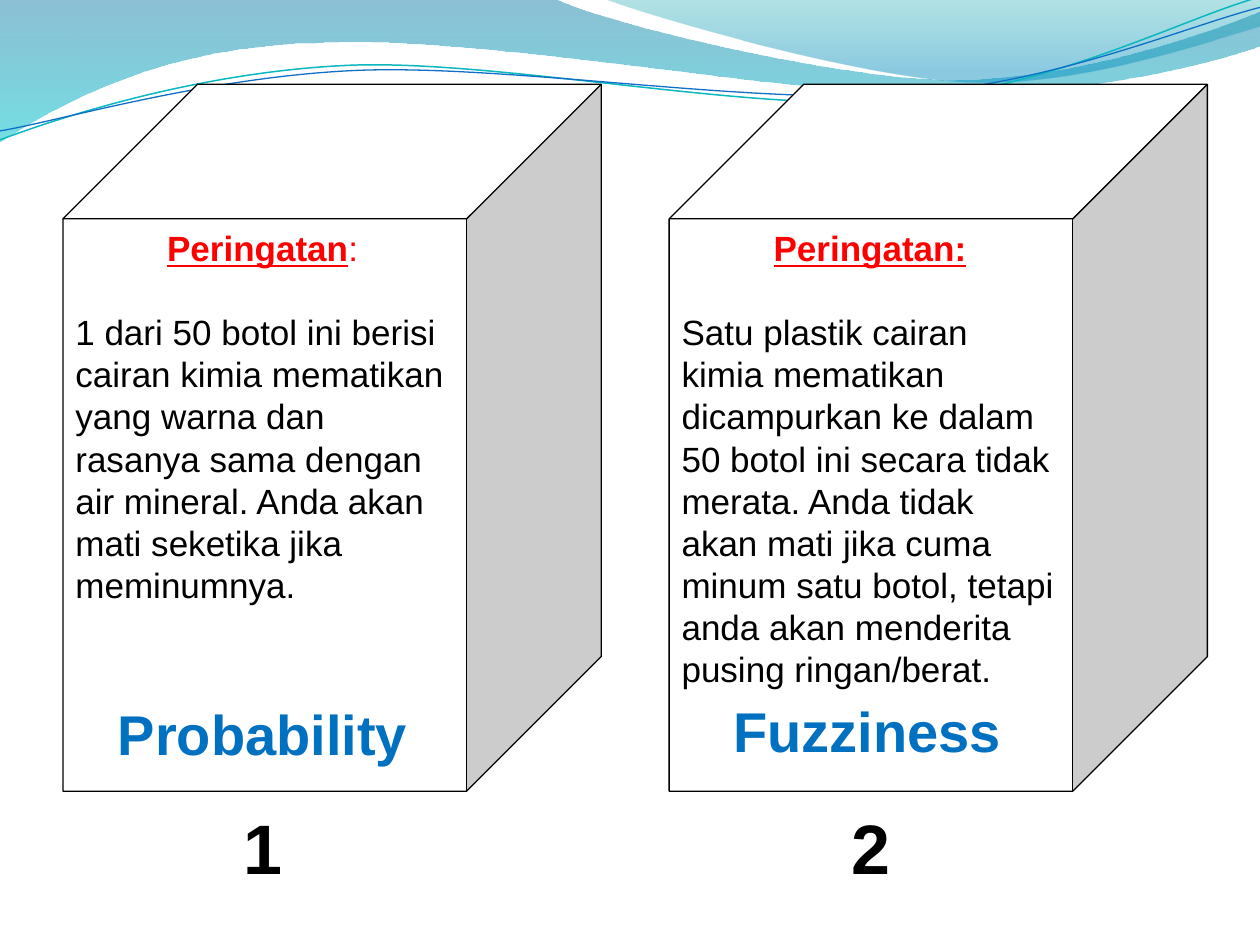
from pptx import Presentation
from pptx.dml.color import RGBColor as RGB
from pptx.enum.shapes import MSO_SHAPE as Shape
from pptx.enum.text import PP_ALIGN as Align
from pptx.oxml.ns import qn
from pptx.util import Cm, Pt
from lxml.etree import SubElement

COLORS = {
    "warning": "FF0000", "text": "000000", "name": "0070C0",
    "cube": "FFFFFF", "edge": "000000",
    "deep": "0074A1", "aqua": "00C6CF", "teal": "00A1A9", "sky": "008BBF",
    "teal line": "0AB8BF", "blue line": "0F6FC6",
}

# Heading runs are (text, underlined and bold); places are left, top, width in cm
BOXES = [
    {"cube left": 1.27,
     "heading": [("Peringatan", True), (":", False)],
     "warning": "1 dari 50 botol ini berisi cairan kimia mematikan yang warna "
                "dan rasanya sama dengan air mineral. Anda akan mati seketika "
                "jika meminumnya.",
     "warning place": (1.27, 4.45, 8.05),
     "labels": [("1", "number", "text", (1.27, 16.1, 8.05)),
                ("Probability", "name", "name", (1.27, 13.98, 8.05))]},
    {"cube left": 13.49,
     "heading": [("Peringatan:", True)],
     "warning": "Satu plastik cairan kimia mematikan dicampurkan ke dalam 50 "
                "botol ini secara tidak merata. Anda tidak akan mati jika cuma "
                "minum satu botol, tetapi anda akan menderita pusing "
                "ringan/berat.",
     "warning place": (13.49, 4.45, 8.1),
     "labels": [("2", "number", "text", (13.54, 16.1, 8.05)),
                ("Fuzziness", "name", "name", (13.46, 13.91, 8.05))]},
]

# Outlines in cm: one point is a straight step, three points are a Bézier curve.
# Gradient stops: position, colour, opacity in percent
BANDS = [
    ([[(0, -0.03)], [(11.18, -0.03)],
      [(12.09, 0.43), (16.87, 1.6), (19.25, 1.6)],
      [(21.67, 1.6), (24.33, 0.66), (25.4, 0.23)], [(25.43, 0.91)],
      [(24.97, 1.12), (22.1, 1.93), (18.95, 1.91)],
      [(15.8, 1.91), (9.7, 0.71), (6.53, 0.86)],
      [(3.28, 0.89), (1.17, 2.11), (-0.03, 2.87)]],
     [(0, "deep", 45), (1, "aqua", 55)]),
    ([[(12.17, -0.03)],
      [(12.93, 0.28), (17.32, 1.57), (19.53, 1.65)],
      [(21.74, 1.75), (24.41, 0.81), (25.4, 0.53)], [(25.4, 0)]],
     [(0, "teal", 30), (0.8, "sky", 45)]),
]
RIPPLES = [
    ([[(-0.05, 2.22)],
      [(1.19, 1.82), (4.02, 1.04), (7.05, 1.05)],
      [(10.05, 1.07), (15.02, 2.37), (18.08, 2.29)],
      [(21.13, 2.2), (23.86, 0.91), (25.41, 0.55)]], "teal line", 0.85),
    ([[(-0.04, 2.04)],
      [(1.16, 1.9), (4.17, 1.15), (7.2, 1.16)],
      [(10.25, 1.18), (15.13, 2.23), (18.19, 2.16)],
      [(21.22, 2.1), (23.93, 1.06), (25.45, 0.75)]], "blue line", 0.75),
]
RIPPLE_TILT = 357.3

FORMATS = {
    "heading": {"size": Pt(20), "bold": True, "underline": True},
    "colon": {"size": Pt(20), "bold": False, "underline": False},
    "warning": {"size": Pt(20), "bold": False},
    "name": {"size": Pt(32), "bold": True},
    "number": {"size": Pt(40), "bold": True},
}

CUBE_TOP, CUBE_WIDTH, CUBE_HEIGHT = 1.7, 10.85, 14.25
WARNING_HEIGHT, LABEL_HEIGHT = 11.5, 2.03


def color(key):
    return RGB.from_string(COLORS[key])


def add_wave(slide, outline, close):
    start, *corners = [(Cm(x), Cm(y)) for step in outline for x, y in step]
    builder = slide.shapes.build_freeform(*start)
    builder.add_line_segments(corners, close=close)
    wave = builder.convert_to_shape()
    wave.shadow.inherit = False
    # Join each run of three straight steps that stands for a curve
    steps = iter(list(wave.element.spPr.iter(qn("a:lnTo"))))
    for points in outline[1:]:
        curve, *others = [next(steps) for _ in points]
        if others:
            curve.tag = qn("a:cubicBezTo")
        for other in others:
            curve.append(other[0])
            other.getparent().remove(other)
    return wave


def add_band(slide, outline, stops):
    band = add_wave(slide, outline, True)
    band.line.fill.background()
    band.fill.gradient()
    band.fill.gradient_angle = 270
    for stop, (position, key, _) in zip(band.fill.gradient_stops, stops):
        stop.position = position
        stop.color.rgb = color(key)
    tints = list(band.element.spPr.iter(qn("a:srgbClr")))
    for tint, (_, _, opacity) in zip(tints, stops):
        SubElement(tint, qn("a:alpha")).set("val", str(opacity * 1000))


def add_ripple(slide, outline, key, width):
    ripple = add_wave(slide, outline, False)
    ripple.rotation = RIPPLE_TILT
    ripple.fill.background()
    ripple.line.color.rgb = color(key)
    ripple.line.width = Pt(width)


def add_cube(slide, left):
    cube = slide.shapes.add_shape(Shape.CUBE, Cm(left), Cm(CUBE_TOP),
                                  Cm(CUBE_WIDTH), Cm(CUBE_HEIGHT))
    cube.shadow.inherit = False
    cube.fill.solid()
    cube.fill.fore_color.rgb = color("cube")
    cube.line.color.rgb = color("edge")
    cube.line.width = Pt(0.75)


def add_frame(slide, place, height):
    left, top, width = place
    frame = slide.shapes.add_textbox(Cm(left), Cm(top), Cm(width),
                                     Cm(height)).text_frame
    frame.word_wrap = True
    frame.paragraphs[0].alignment = Align.CENTER
    return frame


def add_run(paragraph, text, style, key):
    run = paragraph.add_run()
    run.text = text
    run.font.name = "Arial"
    run.font.color.rgb = color(key)
    for attribute, value in FORMATS[style].items():
        setattr(run.font, attribute, value)


def add_warning(slide, box):
    frame = add_frame(slide, box["warning place"], WARNING_HEIGHT)
    heading = frame.paragraphs[0]
    heading.space_after = Pt(24)
    for text, marked in box["heading"]:
        add_run(heading, text, "heading" if marked else "colon", "warning")
    add_run(frame.add_paragraph(), box["warning"], "warning", "text")


def main():
    deck = Presentation()
    deck.slide_width, deck.slide_height = Cm(25.4), Cm(19.05)
    slide = deck.slides.add_slide(deck.slide_layouts[6])
    # Waves along the top
    for band in BANDS:
        add_band(slide, *band)
    for ripple in RIPPLES:
        add_ripple(slide, *ripple)
    # Cubes with their warnings
    for box in BOXES:
        add_cube(slide, box["cube left"])
        add_warning(slide, box)
    # Numbers and names
    for box in BOXES:
        for text, style, key, place in box["labels"]:
            frame = add_frame(slide, place, LABEL_HEIGHT)
            add_run(frame.paragraphs[0], text, style, key)
    deck.save("out.pptx")


if __name__ == "__main__":
    main()
